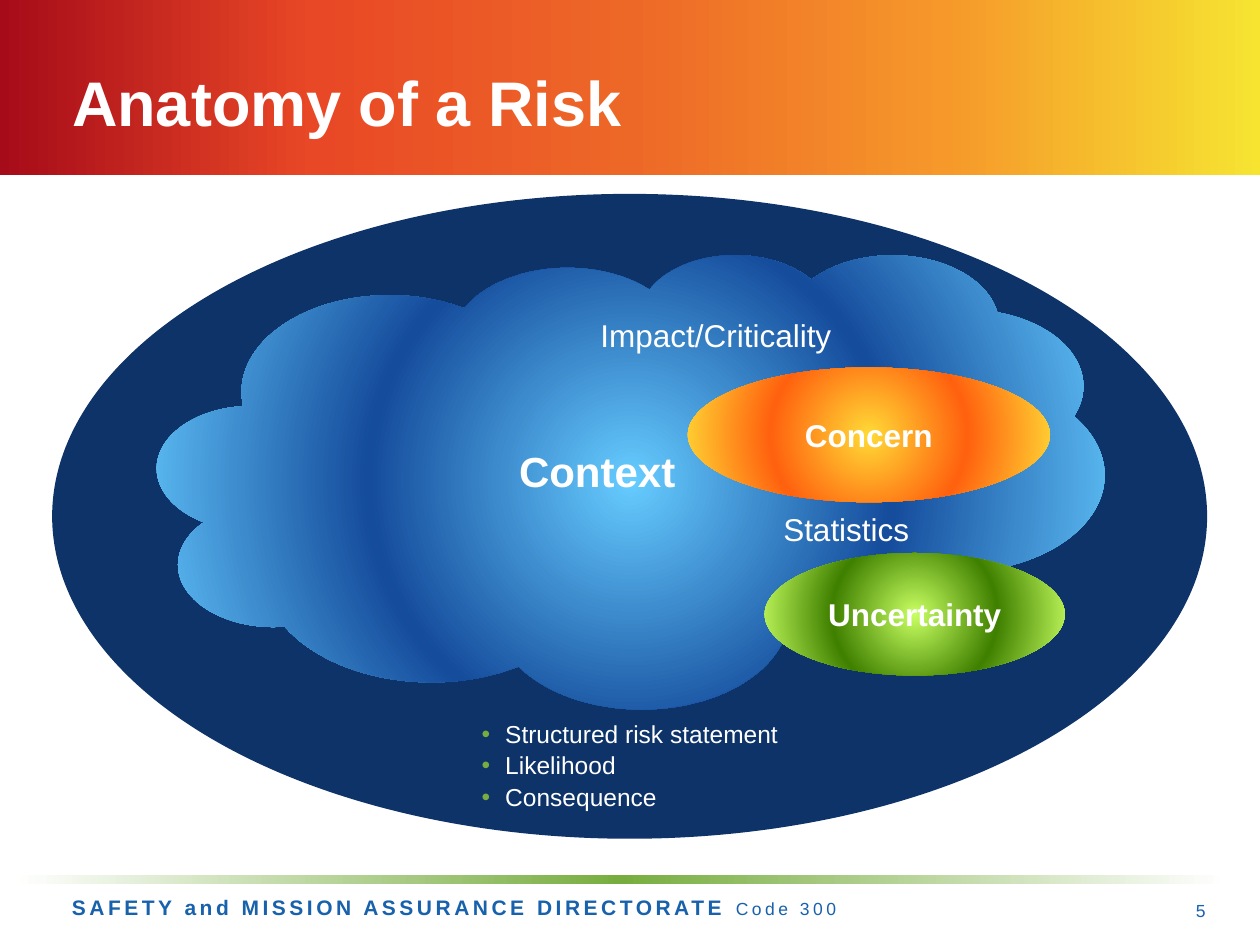
from dataclasses import dataclass
from typing import Optional

import pptx
import pptx.dml.color
import pptx.enum.shapes
import pptx.enum.text
import pptx.oxml
import pptx.oxml.ns
import pptx.util

Pt = pptx.util.Pt
Kind = pptx.enum.shapes.MSO_SHAPE
Align = pptx.enum.text.PP_ALIGN
Anchor = pptx.enum.text.MSO_ANCHOR
AutoSize = pptx.enum.text.MSO_AUTO_SIZE

FONT = "Arial"
WHITE, BLUE, GREEN = "FFFFFF", "1861AC", "77AD3F"
LINEAR = '<a:lin ang="0" scaled="0"/>'
RADIAL = ('<a:path path="circle">'
          '<a:fillToRect l="50000" t="50000" r="50000" b="50000"/></a:path>')


@dataclass
class Box:
    left: float
    top: float
    width: float
    height: float

    def lengths(self) -> list:
        return [Pt(v) for v in (self.left, self.top, self.width, self.height)]


@dataclass
class Figure:
    kind: int
    box: Box
    stops: dict  # position in percent -> colour; a single stop is a solid fill
    direction: str = RADIAL
    label: str = ""
    size: float = 18


@dataclass
class Caption:
    text: str
    box: Box
    size: float = 18
    color: str = WHITE
    align: int = Align.LEFT
    anchor: int = Anchor.TOP
    wrap: bool = False


def rgb(color: str):
    return pptx.dml.color.RGBColor.from_string(color)


def drawing_xml(xml: str):
    """Parse one element whose prefix is a:."""
    head, tail = xml.split(">", 1)
    closing = "/" if head.endswith("/") else ""
    namespace = pptx.oxml.ns.nsdecls("a")
    return pptx.oxml.parse_xml(f"{head.rstrip('/')} {namespace}{closing}>{tail}")


def format_run(run, size: float, color: str, bold: bool = False) -> None:
    run.font.name = FONT
    run.font.size = Pt(size)
    run.font.bold = bold
    run.font.color.rgb = rgb(color)


def fill_gradient(shape, stops: dict, direction: str) -> None:
    shape.fill.background()
    properties = shape._element.spPr
    stop_xml = "".join(
        f'<a:gs pos="{position * 1000}"><a:srgbClr val="{color}"/></a:gs>'
        for position, color in stops.items())
    gradient = drawing_xml(
        f'<a:gradFill rotWithShape="1"><a:gsLst>{stop_xml}</a:gsLst>{direction}</a:gradFill>')
    properties.replace(properties.find(pptx.oxml.ns.qn("a:noFill")), gradient)


def add_figure(slide, figure: Figure) -> None:
    shape = slide.shapes.add_shape(figure.kind, *figure.box.lengths())
    shape.shadow.inherit = False
    if len(figure.stops) == 1:
        shape.fill.solid()
        shape.fill.fore_color.rgb = rgb(figure.stops[0])
    else:
        fill_gradient(shape, figure.stops, figure.direction)
    shape.line.fill.background()
    if figure.label:
        shape.text_frame.text = figure.label
        shape.text_frame.vertical_anchor = Anchor.MIDDLE
        paragraph = shape.text_frame.paragraphs[0]
        paragraph.alignment = Align.CENTER
        format_run(paragraph.runs[0], figure.size, WHITE, bold=True)


def add_caption(slide, caption: Caption) -> None:
    frame = slide.shapes.add_textbox(*caption.box.lengths()).text_frame
    frame.word_wrap = caption.wrap
    frame.vertical_anchor = caption.anchor
    frame.text = caption.text
    paragraph = frame.paragraphs[0]
    paragraph.alignment = caption.align
    format_run(paragraph.runs[0], caption.size, caption.color)


def add_footer(slide) -> None:
    frame = slide.shapes.add_textbox(*Box(34, 507.5, 594, 21.8).lengths()).text_frame
    frame.word_wrap = True
    paragraph = frame.paragraphs[0]
    for text, size, bold in (("SAFETY and MISSION ASSURANCE DIRECTORATE ", 12, True),
                             ("Code 300", 10, False)):
        run = paragraph.add_run()
        run.text = text
        format_run(run, size, BLUE, bold)
        run.font._element.set("spc", "200")


def place(placeholder, box: Box, text: str, anchor: int):
    """Move a placeholder to the front, at box, and return its text frame."""
    placeholder.left, placeholder.top, placeholder.width, placeholder.height = box.lengths()
    tree = placeholder._element.getparent()
    tree.append(placeholder._element)
    frame = placeholder.text_frame
    frame.text = text
    frame.word_wrap = True
    frame.auto_size = AutoSize.NONE
    frame.vertical_anchor = anchor
    return frame


def set_title(slide, text: str) -> None:
    frame = place(slide.shapes.title, Box(34, 13, 648, 90), text, Anchor.MIDDLE)
    paragraph = frame.paragraphs[0]
    paragraph.alignment = Align.LEFT
    format_run(paragraph.runs[0], 36, WHITE, bold=True)


def set_bullets(slide, items: list) -> None:
    frame = place(slide.placeholders[1], Box(268, 409, 184, 69), "\n".join(items), Anchor.TOP)
    indent = Pt(13.5)
    for paragraph in frame.paragraphs:
        paragraph.line_spacing = 0.9
        paragraph.space_before = Pt(2.8)
        format_run(paragraph.runs[0], 14, WHITE)
        properties = paragraph._p.get_or_add_pPr()
        properties.set("marL", str(indent))
        properties.set("indent", str(-indent))
        for xml in (f'<a:buClr><a:srgbClr val="{GREEN}"/></a:buClr>',
                    f'<a:buFont typeface="{FONT}"/>',
                    '<a:buChar char="•"/>'):
            properties.append(drawing_xml(xml))


FIGURES = [
    Figure(Kind.RECTANGLE, Box(0, 0, 720, 100),
           {0: "A60B19", 25: "E94826", 50: "ED6827", 75: "F6982A", 100: "F6E431"}, LINEAR),
    Figure(Kind.RECTANGLE, Box(8.6, 500, 692, 5), {0: WHITE, 50: GREEN, 100: WHITE}, LINEAR),
    Figure(Kind.OVAL, Box(29.8, 110.8, 660, 368.5), {0: "0D3369"}),
    Figure(Kind.CLOUD, Box(90, 145, 541, 259.5),
           {0: "66CCFF", 50: "154C9C", 100: "66CCFF"}, label="Context", size=24),
    Figure(Kind.OVAL, Box(393, 210, 207, 77),
           {0: "FFDA36", 51: "FF610E", 100: "FFDA36"}, label="Concern"),
    Figure(Kind.OVAL, Box(437, 316, 171.5, 70),
           {0: "C8FF62", 51: "408000", 100: "C8FF62"}, label="Uncertainty"),
]

CAPTIONS = [
    Caption("Impact/Criticality", Box(336, 177, 147.5, 29)),
    Caption("Statistics", Box(440.5, 288, 87, 29)),
    Caption("5", Box(665, 505.5, 31, 29), 10, BLUE, Align.RIGHT, Anchor.MIDDLE, True),
]


def main() -> None:
    presentation = pptx.Presentation()
    presentation.slide_width, presentation.slide_height = Pt(720), Pt(540)
    slide = presentation.slides.add_slide(presentation.slide_layouts[1])
    for figure in FIGURES:
        add_figure(slide, figure)
    for caption in CAPTIONS:
        add_caption(slide, caption)
    add_footer(slide)
    set_title(slide, "Anatomy of a Risk")
    set_bullets(slide, ["Structured risk statement", "Likelihood", "Consequence"])
    presentation.save("out.pptx")


if __name__ == "__main__":
    main()
